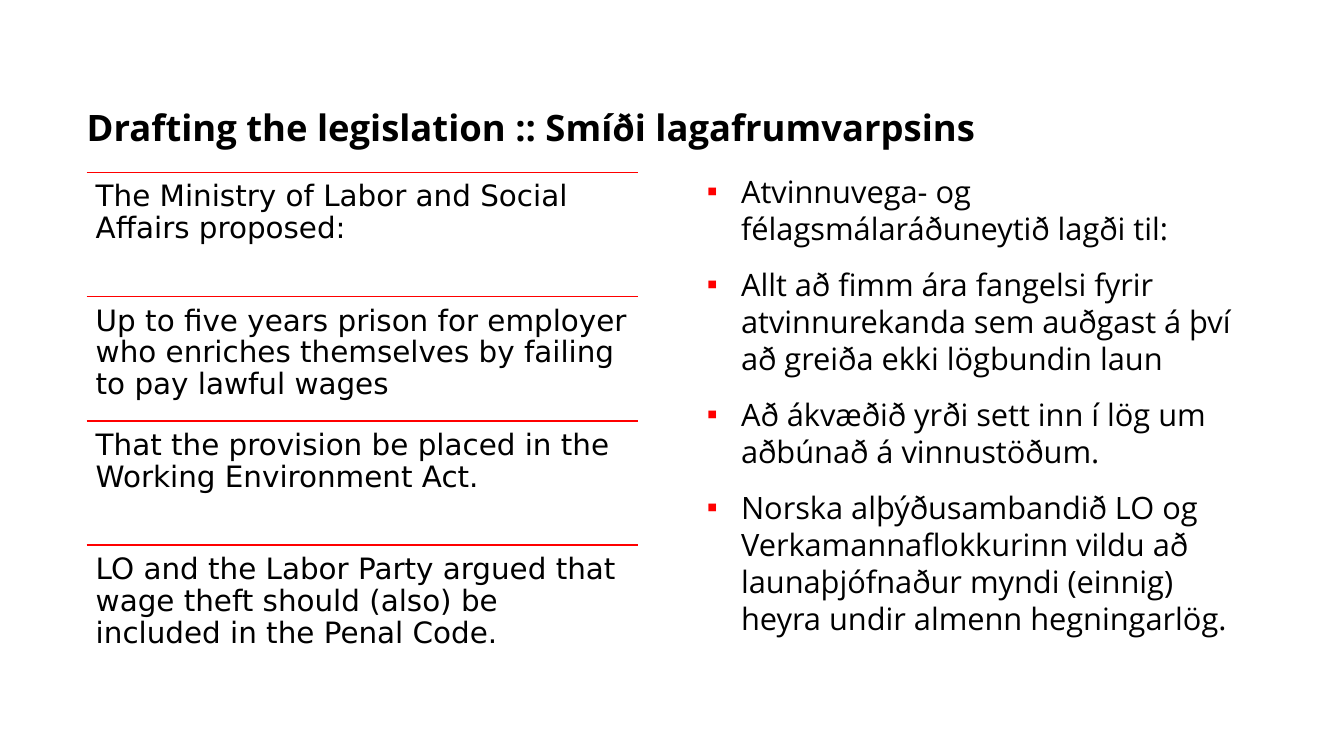
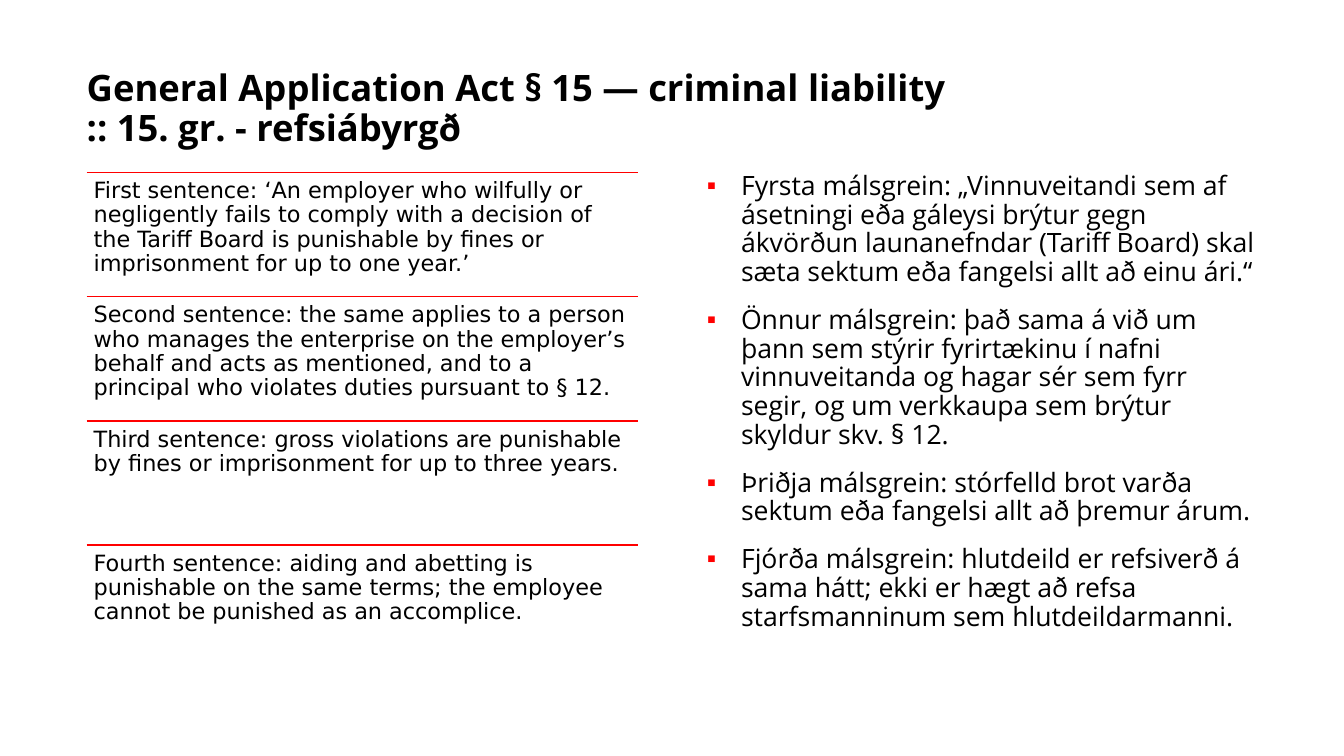
from lxml import etree
from pptx import Presentation
from pptx.dml.color import RGBColor
from pptx.enum.shapes import MSO_CONNECTOR
from pptx.enum.text import MSO_ANCHOR, MSO_AUTO_SIZE, PP_ALIGN
from pptx.oxml.ns import qn
from pptx.util import Inches, Pt

BLACK = RGBColor(0x00, 0x00, 0x00)
RED = RGBColor(0xFF, 0x00, 0x00)
HEADING_FONT = "Open Sans"
ENGLISH_FONT = "DejaVu Sans"

LEFT, TOP = 0.86, 1.71
COLUMN_WIDTH, COLUMN_HEIGHT = 5.47, 4.93
ICELANDIC_LEFT = 7.01

SLIDES = [
    {
        "title": "Drafting the legislation :: Smíði lagafrumvarpsins",
        "english_size": 21, "english_inset": 0.09,
        "icelandic_size": 22, "icelandic_spacing": 1.0,
        "english": [
            "The Ministry of Labor and Social Affairs proposed:",
            "Up to five years prison for employer who enriches themselves by failing to pay lawful wages",
            "That the provision be placed in the Working Environment Act.",
            "LO and the Labor Party argued that wage theft should (also) be included in the Penal Code.",
        ],
        "icelandic": [
            "Atvinnuvega- og félagsmálaráðuneytið lagði til:",
            "Allt að fimm ára fangelsi fyrir atvinnurekanda sem auðgast á því að greiða ekki lögbundin laun",
            "Að ákvæðið yrði sett inn í lög um aðbúnað á vinnustöðum.",
            "Norska alþýðusambandið LO og Verkamannaflokkurinn vildu að launaþjófnaður myndi (einnig) "
            "heyra undir almenn hegningarlög.",
        ],
    },
    {
        "title": "General Application Act § 15 — criminal liability\v:: 15. gr. - refsiábyrgð",
        "english_size": 16, "english_inset": 0.07,
        "icelandic_size": 19, "icelandic_spacing": 0.9,
        "english": [
            "First sentence: ‘An employer who wilfully or negligently fails to comply with a decision of "
            "the Tariff Board is punishable by fines or imprisonment for up to one year.’",
            "Second sentence: the same applies to a person who manages the enterprise on the employer’s "
            "behalf and acts as mentioned, and to a principal who violates duties pursuant to § 12.",
            "Third sentence: gross violations are punishable by fines or imprisonment for up to three years.",
            "Fourth sentence: aiding and abetting is punishable on the same terms; the employee cannot be "
            "punished as an accomplice.",
        ],
        "icelandic": [
            "Fyrsta málsgrein: „Vinnuveitandi sem af ásetningi eða gáleysi brýtur gegn ákvörðun "
            "launanefndar (Tariff Board) skal sæta sektum eða fangelsi allt að einu ári.“",
            "Önnur málsgrein: það sama á við um þann sem stýrir fyrirtækinu í nafni vinnuveitanda og "
            "hagar sér sem fyrr segir, og um verkkaupa sem brýtur skyldur skv. § 12.",
            "Þriðja málsgrein: stórfelld brot varða sektum eða fangelsi allt að þremur árum.",
            "Fjórða málsgrein: hlutdeild er refsiverð á sama hátt; ekki er hægt að refsa starfsmanninum "
            "sem hlutdeildarmanni.",
        ],
    },
]


def place(shape, left, top, width, height, inset=0.0, anchor=MSO_ANCHOR.TOP):
    """Position a text shape, set its insets and return its text frame."""
    shape.left, shape.top = Inches(left), Inches(top)
    shape.width, shape.height = Inches(width), Inches(height)
    frame = shape.text_frame
    frame.word_wrap = True
    frame.auto_size = MSO_AUTO_SIZE.NONE
    frame.vertical_anchor = anchor
    frame.margin_left = frame.margin_right = Inches(inset)
    frame.margin_top = frame.margin_bottom = Inches(inset)
    return frame


def style(paragraph, font_name, size, spacing, bold=False):
    paragraph.alignment = PP_ALIGN.LEFT
    paragraph.line_spacing = spacing
    font = paragraph.font
    font.name, font.size, font.bold = font_name, Pt(size), bold
    font.color.rgb = BLACK


prs = Presentation()
prs.slide_width, prs.slide_height = Inches(13.33), Inches(7.5)

for content in SLIDES:
    slide = prs.slides.add_slide(prs.slide_layouts[1])

    heading = place(slide.shapes.title, LEFT, 0.66, 11.62, 0.82, anchor=MSO_ANCHOR.BOTTOM)
    heading.text = content["title"]
    style(heading.paragraphs[0], HEADING_FONT, 26, 0.9, bold=True)

    icelandic = place(slide.placeholders[1], ICELANDIC_LEFT, TOP, COLUMN_WIDTH, COLUMN_HEIGHT)
    icelandic.text = "\n".join(content["icelandic"])
    for index, paragraph in enumerate(icelandic.paragraphs):
        props = paragraph._p.get_or_add_pPr()
        props.set("marL", str(Inches(0.34)))
        props.set("indent", str(-Inches(0.34)))
        bullet_color = etree.SubElement(props, qn("a:buClr"))
        etree.SubElement(bullet_color, qn("a:srgbClr"), val=str(RED))
        etree.SubElement(props, qn("a:buChar"), char="▪")
        paragraph.space_before = Pt(13.7 if index else 0)
        style(paragraph, HEADING_FONT, content["icelandic_size"], content["icelandic_spacing"])

    row_height = COLUMN_HEIGHT / len(content["english"])
    for row, sentence in enumerate(content["english"]):
        row_top = TOP + row * row_height
        rule = slide.shapes.add_connector(
            MSO_CONNECTOR.STRAIGHT, Inches(LEFT), Inches(row_top),
            Inches(LEFT + COLUMN_WIDTH), Inches(row_top))
        rule.line.color.rgb = RED
        rule.line.width = Pt(1)
        etree.SubElement(rule._element.spPr, qn("a:effectLst"))

        english = place(slide.shapes.add_textbox(0, 0, 0, 0), LEFT, row_top,
                        COLUMN_WIDTH, row_height, content["english_inset"])
        english.text = sentence
        style(english.paragraphs[0], ENGLISH_FONT, content["english_size"], 0.9)

prs.save("out.pptx")
